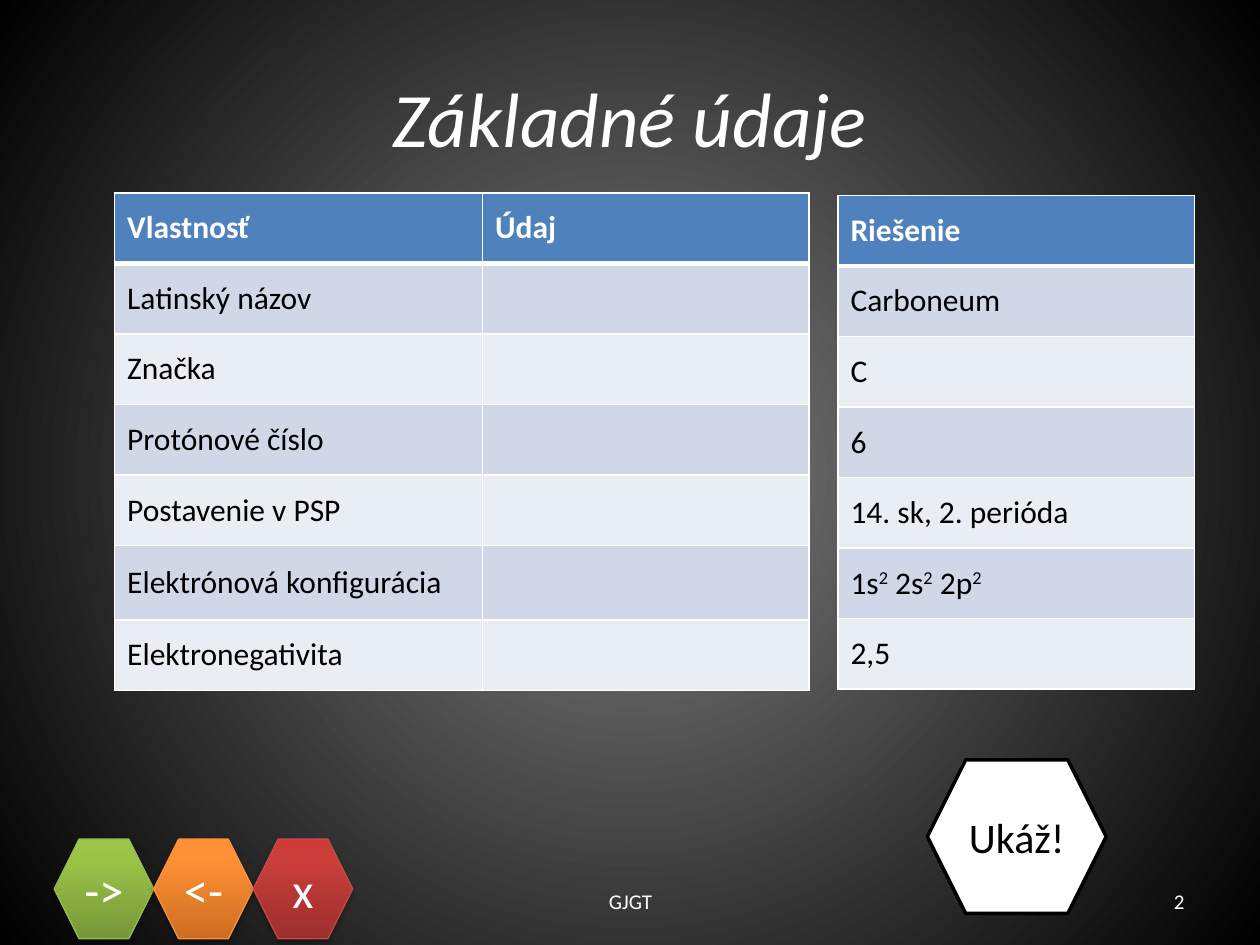
from lxml import etree
from pptx import Presentation
from pptx.dml.color import RGBColor
from pptx.enum.shapes import MSO_SHAPE
from pptx.enum.text import MSO_ANCHOR, PP_ALIGN
from pptx.oxml import parse_xml
from pptx.oxml.ns import nsdecls, qn
from pptx.util import Inches, Pt

HEXAGON = MSO_SHAPE.HEXAGON
MIDDLE = MSO_ANCHOR.MIDDLE
LEFT, CENTER, RIGHT = PP_ALIGN.LEFT, PP_ALIGN.CENTER, PP_ALIGN.RIGHT
FONT = "Calibri"
TITLE_ONLY = 5
COLORS = {
    "white": "FFFFFF", "black": "000000", "glow": "7F7F7F",
    "header": "4F81BD", "band_dark": "D0D8E8", "band_light": "E9EDF4",
}
BUTTONS = [
    ("->", "98B955", [(0, "779737"), (80, "9BC348"), (100, "9DC746")]),
    ("<-", "F69240", [(0, "CC6E20"), (80, "FF9034"), (100, "FF9136")]),
    ("x", "BF4C48", [(0, "9C2F2D"), (80, "CB3E3A"), (100, "CE3B37")]),
]
PROPERTIES = [
    ["Vlastnosť", "Údaj"],
    ["Latinský názov", ""],
    ["Značka", ""],
    ["Protónové číslo", ""],
    ["Postavenie v PSP", ""],
    ["Elektrónová konfigurácia", ""],
    ["Elektronegativita", ""],
]
SOLUTIONS = [
    ["Riešenie"], ["Carboneum"], ["C"], ["6"], ["14. sk, 2. perióda"],
    ["1s^2^ 2s^2^ 2p^2"], ["2,5"],
]


def rgb(name):
    return RGBColor.from_string(COLORS[name])


def write_text(frame, text, size, color, align=LEFT, bold=False, italic=False):
    paragraph = frame.paragraphs[0]
    paragraph.alignment = align
    for index, part in enumerate(text.split("^")):
        run = paragraph.add_run()
        run.text = part
        font = run.font
        font.name, font.size, font.bold, font.italic = FONT, Pt(size), bold, italic
        font.color.rgb = rgb(color)
        if index % 2:
            font._element.set("baseline", "30000")


def set_gradient(gradient, stops, direction):
    for child in list(gradient):
        gradient.remove(child)
    stop_list = etree.SubElement(gradient, qn("a:gsLst"))
    for position, color in stops:
        stop = etree.SubElement(stop_list, qn("a:gs"), pos=str(position * 1000))
        etree.SubElement(stop, qn("a:srgbClr"), val=color)
    gradient.append(parse_xml(direction))


def set_background(slide):
    slide.background.fill.gradient()
    gradient = slide._element.find(".//" + qn("a:gradFill"))
    stops = [(0, COLORS["glow"]), (100, COLORS["black"])]
    set_gradient(gradient, stops, (
        f'<a:path {nsdecls("a")} path="circle">'
        '<a:fillToRect l="50000" t="50000" r="50000" b="50000"/></a:path>'))


def add_hexagon(slide, left, top, width, height, text, size, color):
    shape = slide.shapes.add_shape(
        HEXAGON, Inches(left), Inches(top), Inches(width), Inches(height))
    shape.shadow.inherit = False
    shape.text_frame.word_wrap = False
    shape.text_frame.vertical_anchor = MIDDLE
    write_text(shape.text_frame, text, size, color, CENTER)
    return shape


def add_navigation(slide, left, top, size):
    for index, (label, line_color, stops) in enumerate(BUTTONS):
        button = add_hexagon(
            slide, left + index * size, top, size, size, label, 28, "white")
        button.line.color.rgb = RGBColor.from_string(line_color)
        button.line.width = Pt(0.75)
        button.fill.gradient()
        properties = button._element.spPr
        set_gradient(properties.find(qn("a:gradFill")), stops,
                     f'<a:lin {nsdecls("a")} ang="16200000" scaled="0"/>')
        properties.find(qn("a:effectLst")).append(parse_xml(
            f'<a:outerShdw {nsdecls("a")} blurRad="{Pt(3.1)}" dist="{Pt(1.8)}" '
            'dir="5400000" rotWithShape="0"><a:srgbClr val="000000">'
            '<a:alpha val="35000"/></a:srgbClr></a:outerShdw>'))


def add_reveal_button(slide, left, top, width, height):
    button = add_hexagon(slide, left, top, width, height, "Ukáž!", 24, "black")
    button.fill.solid()
    button.fill.fore_color.rgb = rgb("white")
    button.line.color.rgb = rgb("black")
    button.line.width = Pt(2)


def set_borders(cell, bottom_width, top_width):
    properties = cell._tc.get_or_add_tcPr()
    widths = {"lnL": 1, "lnR": 1, "lnT": top_width, "lnB": bottom_width}
    for index, (side, width) in enumerate(widths.items()):
        properties.insert(index, parse_xml(
            f'<a:{side} {nsdecls("a")} w="{Pt(width)}"><a:solidFill>'
            f'<a:srgbClr val="{COLORS["white"]}"/></a:solidFill></a:{side}>'))


def add_banded_table(slide, left, top, column_widths, row_heights, rows):
    table = slide.shapes.add_table(
        len(rows), len(column_widths), Inches(left), Inches(top),
        Inches(sum(column_widths)), Inches(sum(row_heights))).table
    for column, width in zip(table.columns, column_widths):
        column.width = Inches(width)
    for row_index, (texts, height) in enumerate(zip(rows, row_heights)):
        table.rows[row_index].height = Inches(height)
        is_header = row_index == 0
        band = "band_dark" if row_index % 2 else "band_light"
        for column_index, text in enumerate(texts):
            cell = table.cell(row_index, column_index)
            cell.vertical_anchor = MIDDLE
            cell.fill.solid()
            cell.fill.fore_color.rgb = rgb("header" if is_header else band)
            set_borders(cell, 3 if is_header else 1, 3 if row_index == 1 else 1)
            if text:
                write_text(cell.text_frame, text, 18,
                           "white" if is_header else "black", bold=is_header)


def add_title(slide, left, top, width, height):
    title = slide.shapes.title
    title.left, title.top = Inches(left), Inches(top)
    title.width, title.height = Inches(width), Inches(height)
    title.text_frame.vertical_anchor = MIDDLE
    write_text(title.text_frame, "Základné údaje", 44, "white", CENTER, italic=True)


def add_footer_text(slide, left, top, width, height, text, align):
    box = slide.shapes.add_textbox(
        Inches(left), Inches(top), Inches(width), Inches(height))
    box.text_frame.word_wrap = True
    box.text_frame.vertical_anchor = MIDDLE
    write_text(box.text_frame, text, 12, "white", align)


def main():
    presentation = Presentation()
    presentation.slide_width, presentation.slide_height = Inches(10), Inches(7.5)
    slide = presentation.slides.add_slide(presentation.slide_layouts[TITLE_ONLY])
    set_background(slide)
    add_navigation(slide, 0.43, 6.66, 0.79)
    add_title(slide, 0.5, 0.3, 9, 1.25)
    add_footer_text(slide, 7.17, 6.95, 2.33, 0.4, "2", RIGHT)
    add_banded_table(slide, 0.91, 1.53, [2.92, 2.59],
                     [0.56] * 5 + [0.59, 0.56], PROPERTIES)
    add_banded_table(slide, 6.65, 1.55, [2.83], [0.56] * 7, SOLUTIONS)
    add_reveal_button(slide, 7.36, 6.03, 1.42, 1.22)
    add_footer_text(slide, 3.42, 6.95, 3.17, 0.4, "GJGT", CENTER)
    presentation.save("out.pptx")


if __name__ == "__main__":
    main()
